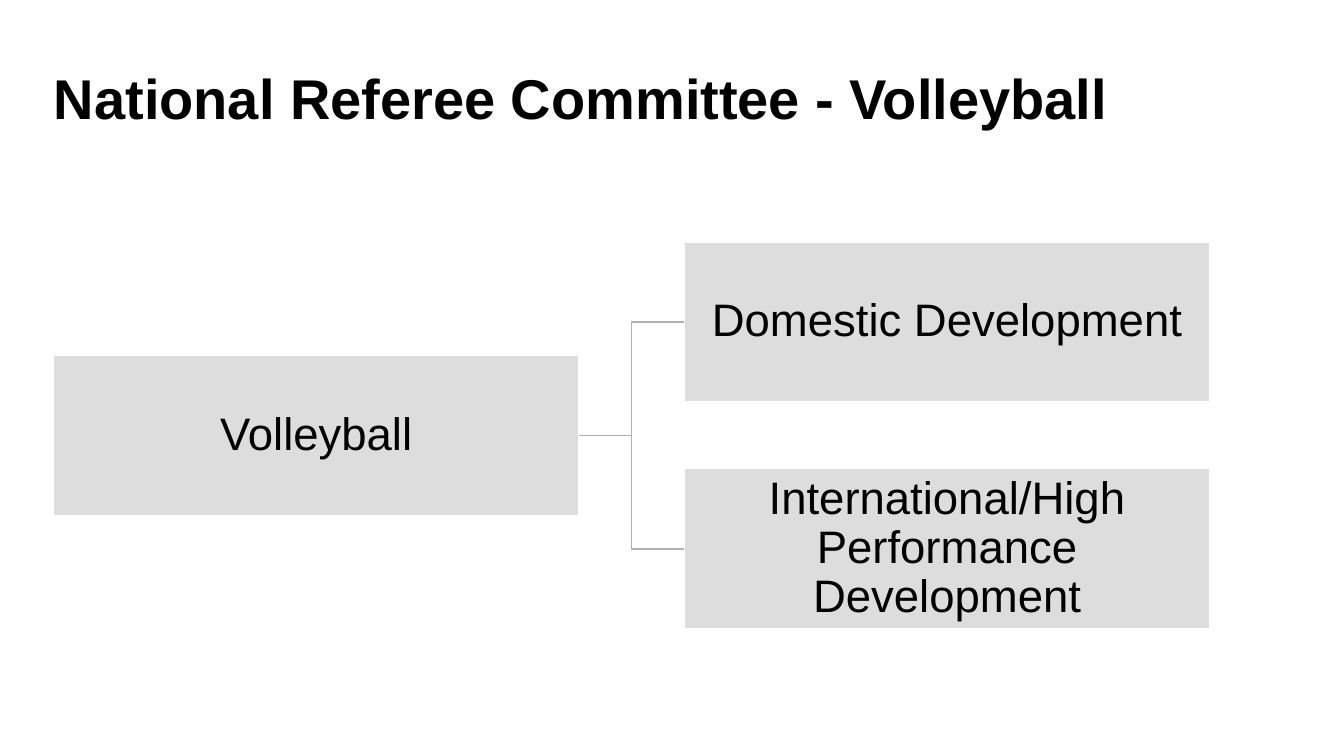
from lxml import etree
from pptx import Presentation
from pptx.dml.color import RGBColor
from pptx.enum.shapes import MSO_CONNECTOR, MSO_SHAPE
from pptx.enum.text import MSO_ANCHOR, MSO_AUTO_SIZE, PP_ALIGN
from pptx.oxml.ns import qn
from pptx.util import Pt

PX = 9144  # EMU per px, 100 px to the inch
ELBOW = MSO_CONNECTOR.ELBOW
RECTANGLE = MSO_SHAPE.RECTANGLE
MIDDLE = MSO_ANCHOR.MIDDLE
LEFT, CENTER = PP_ALIGN.LEFT, PP_ALIGN.CENTER
LEFT_SIDE, RIGHT_SIDE = 1, 3

BLACK = RGBColor(0x00, 0x00, 0x00)
WHITE = RGBColor(0xFF, 0xFF, 0xFF)
BOX_GRAY = RGBColor(0xDD, 0xDD, 0xDD)
LINE_GRAY = RGBColor(0xB1, 0xB1, 0xB1)

BOX_WIDTH, BOX_HEIGHT = 1043, 318
ROOT_LEFT, ROOT_TOP = 106, 705
BRANCH_LEFT = 1358
BRANCH_OFFSET = 225  # branches sit this far above and below the root


def format_text(shape, text, size, alignment, inset, bold=False):
    frame = shape.text_frame
    frame.text = text
    frame.word_wrap = True
    frame.auto_size = MSO_AUTO_SIZE.NONE
    frame.vertical_anchor = MIDDLE
    frame.margin_left = frame.margin_right = inset * PX
    frame.margin_top = frame.margin_bottom = inset * PX
    paragraph = frame.paragraphs[0]
    paragraph.alignment = alignment
    font = paragraph.runs[0].font
    font.name = "Arial"
    font.size = Pt(size)
    font.bold = bold
    font.color.rgb = BLACK


def add_box(text, left, top):
    box = slide.shapes.add_shape(
        RECTANGLE, left * PX, top * PX, BOX_WIDTH * PX, BOX_HEIGHT * PX)
    box.shadow.inherit = False
    box.fill.solid()
    box.fill.fore_color.rgb = BOX_GRAY
    box.line.color.rgb = WHITE
    box.line.width = Pt(2)
    format_text(box, text, 65, CENTER, 5)
    box.text_frame.paragraphs[0].line_spacing = 0.9
    return box


presentation = Presentation()
presentation.slide_width = 2667 * PX
presentation.slide_height = 1500 * PX
slide = presentation.slides.add_slide(presentation.slide_layouts[5])

title = slide.shapes.title
title.left, title.top = 101 * PX, 67 * PX
title.width, title.height = 2297 * PX, 250 * PX
format_text(title, "National Referee Committee - Volleyball", 80, LEFT, 6, bold=True)

root = add_box("Volleyball", ROOT_LEFT, ROOT_TOP)
branches = [
    ("Domestic Development", ROOT_TOP - BRANCH_OFFSET),
    ("International/High Performance Development", ROOT_TOP + BRANCH_OFFSET),
]
for text, top in branches:
    branch = add_box(text, BRANCH_LEFT, top)
    connector = slide.shapes.add_connector(ELBOW, 0, 0, 0, 0)
    connector.begin_connect(root, RIGHT_SIDE)
    connector.end_connect(branch, LEFT_SIDE)
    connector.line.color.rgb = LINE_GRAY
    connector.line.width = Pt(2)
    etree.SubElement(connector._element.spPr, qn("a:effectLst"))

presentation.save("out.pptx")
